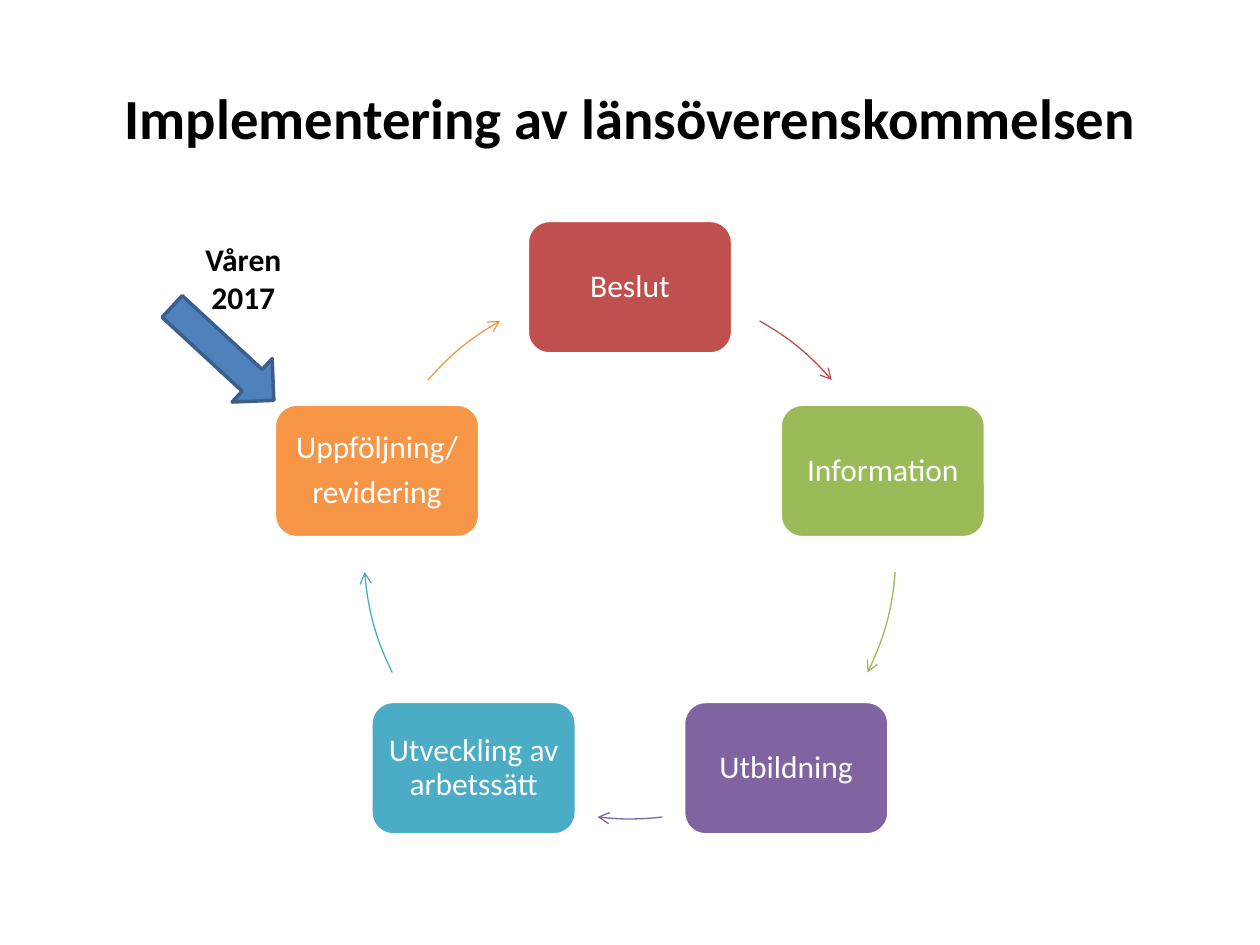
from dataclasses import dataclass
from math import cos, radians, sin

from lxml import etree
from pptx import Presentation
from pptx import util as u
from pptx.dml.color import RGBColor
from pptx.enum import shapes, text
from pptx.oxml.ns import qn

FONT = "Calibri"
CENTER_X, CENTER_Y, RADIUS = 12.7, 11.15, 5.36
BOX_W, BOX_H = 4.14, 2.69


@dataclass
class Step:
    lines: list[str]
    color: str
    arc_start: float  # degrees clockwise from three o'clock
    arc_end: float


STEPS = [
    Step(["Beslut"], "C0504D", 299.2, 319.4),
    Step(["Information"], "9BBB59", 4.1, 26.7),
    Step(["Utbildning"], "8064A2", 83, 97),
    Step(["Utveckling av arbetssätt"], "4BACC6", 153.3, 175.9),
    Step(["Uppföljning/", "revidering"], "F79646", 220.6, 240.8),
]


def rgb(color: str) -> RGBColor:
    return RGBColor.from_string(color)


def format_text(p, size: float, color: str, bold: bool = False) -> None:
    p.alignment = text.PP_ALIGN.CENTER
    p.font.name, p.font.size, p.font.bold = FONT, u.Pt(size), bold
    p.font.color.rgb = rgb(color)


def add_shape(slide, kind, left: float, top: float, width: float, height: float,
              line: str, line_width: float, fill: str | None = None):
    sp = slide.shapes.add_shape(kind, u.Cm(left), u.Cm(top), u.Cm(width), u.Cm(height))
    sp.shadow.inherit = False
    if fill:
        sp.fill.solid()
        sp.fill.fore_color.rgb = rgb(fill)
    else:
        sp.fill.background()
    sp.line.color.rgb = rgb(line)
    sp.line.width = u.Pt(line_width)
    return sp


def add_box(slide, step: Step, angle: float) -> None:
    """Place a step's box centred on the circle at the given angle."""
    x = CENTER_X + RADIUS * cos(radians(angle))
    y = CENTER_Y + RADIUS * sin(radians(angle))
    sp = add_shape(slide, shapes.MSO_SHAPE.ROUNDED_RECTANGLE, x - BOX_W / 2, y - BOX_H / 2,
                   BOX_W, BOX_H, "FFFFFF", 2, step.color)
    tf = sp.text_frame
    tf.word_wrap = True
    tf.vertical_anchor = text.MSO_ANCHOR.MIDDLE
    tf.margin_left = tf.margin_right = tf.margin_top = tf.margin_bottom = u.Cm(0.18)
    tf.text = "\n".join(step.lines)
    for p in tf.paragraphs:
        format_text(p, 18, "FFFFFF")
        p.line_spacing = 0.9
        p.space_after = u.Pt(6.3)


def add_arc(slide, step: Step) -> None:
    sp = add_shape(slide, shapes.MSO_SHAPE.ARC, CENTER_X - RADIUS, CENTER_Y - RADIUS,
                   2 * RADIUS, 2 * RADIUS, step.color, 0.75)
    for i, angle in enumerate((step.arc_start, step.arc_end)):
        sp.adjustments[i] = angle * 0.6  # 60000 units a degree, scaled by 100000
    etree.SubElement(sp.line._get_or_add_ln(), qn("a:tailEnd"), type="arrow")


def add_title(slide, wording: str) -> None:
    title = slide.shapes.title
    title.left, title.top = u.Cm(1.27), u.Cm(0.76)
    title.width, title.height = u.Cm(22.86), u.Cm(3.18)
    tf = title.text_frame
    tf.text = wording
    tf.auto_size = text.MSO_AUTO_SIZE.NONE
    tf.vertical_anchor = text.MSO_ANCHOR.MIDDLE
    format_text(tf.paragraphs[0], 32.4, "000000", bold=True)


def add_start_marker(slide, label: str) -> None:
    arrow = add_shape(slide, shapes.MSO_SHAPE.RIGHT_ARROW, 3.1, 6.53, 2.79, 1.19,
                      "3A5F8C", 2, "4F81BD")
    arrow.rotation = 42.7
    tb = slide.shapes.add_textbox(u.Cm(3.71), u.Cm(4.72), u.Cm(2.39), u.Cm(1.8))
    tf = tb.text_frame
    tf.word_wrap = True
    tf.text = label
    format_text(tf.paragraphs[0], 18, "000000", bold=True)


def main() -> None:
    prs = Presentation()
    prs.slide_width, prs.slide_height = u.Cm(25.4), u.Cm(19.05)
    slide = prs.slides.add_slide(prs.slide_layouts[5])
    add_title(slide, "Implementering av länsöverenskommelsen")
    for i, step in enumerate(STEPS):
        add_box(slide, step, -90 + i * 360 / len(STEPS))
        add_arc(slide, step)
    add_start_marker(slide, "Våren 2017")
    prs.save("out.pptx")


if __name__ == "__main__":
    main()
